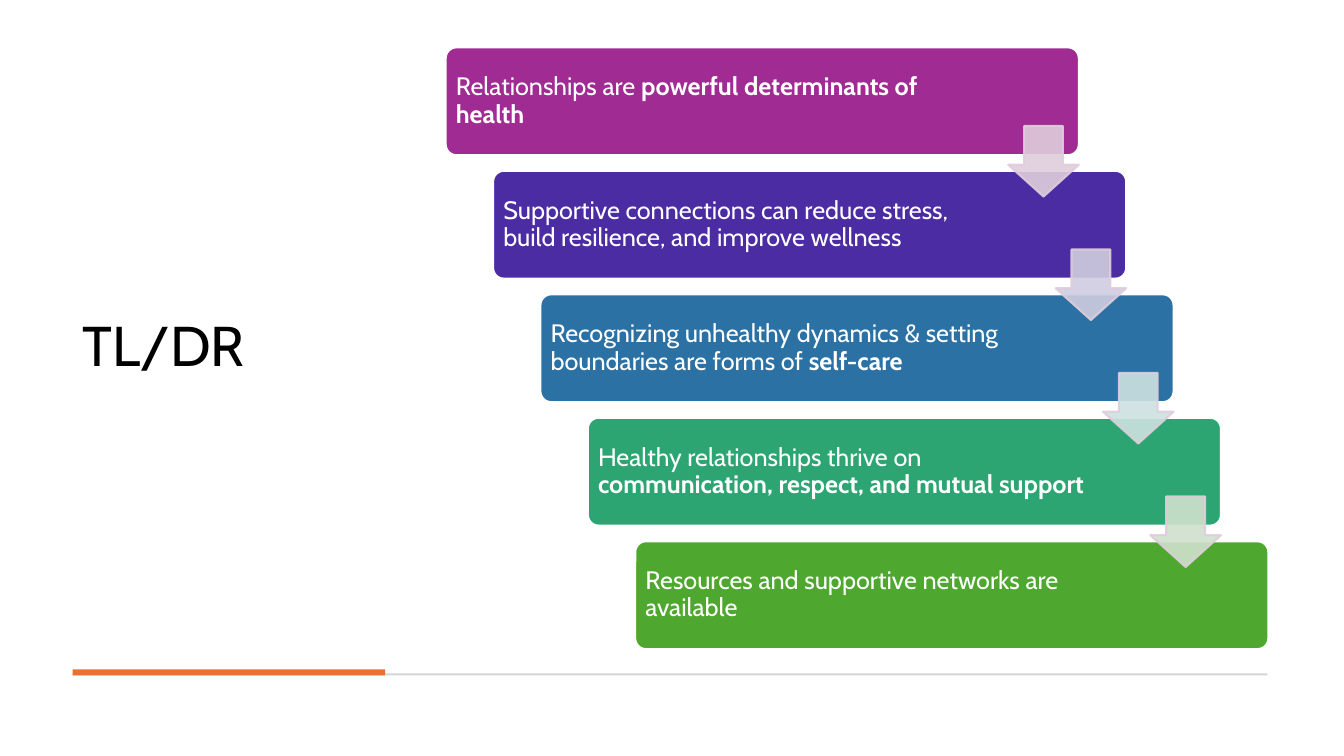
import pptx
import pptx.util
import pptx.dml.color
import pptx.enum.shapes
import pptx.enum.text
import pptx.oxml
import pptx.oxml.ns
from dataclasses import dataclass

Inches = pptx.util.Inches
Pt = pptx.util.Pt
SHAPES = pptx.enum.shapes.MSO_SHAPE
MIDDLE = pptx.enum.text.MSO_ANCHOR.MIDDLE
LEFT = pptx.enum.text.PP_ALIGN.LEFT


@dataclass
class Theme:
    font: str = "Cabin"
    title_size: int = 40
    body_size: int = 18
    outline: float = 1.5
    black: str = "000000"
    white: str = "FFFFFF"
    rule: str = "D5D5D5"
    accent: str = "E97132"
    arrow_line: str = "DFCDDC"
    arrow_opacity: int = 90


theme = Theme()

# Card fill, fill of the arrow leaving the card, and (text, bold) runs
takeaways = [
    ("A02B93", "DFCDDC", [("Relationships are ", False),
                          ("powerful determinants of health", True)]),
    ("4B2CA2", "CFCDE0", [("Supportive connections can reduce stress, "
                           "build resilience, and improve wellness", False)]),
    ("2C71A4", "CDE1E0", [("Recognizing unhealthy dynamics & setting "
                           "boundaries are forms of ", False),
                          ("self-care", True)]),
    ("2DA573", "D0E1CD", [("Healthy relationships thrive on ", False),
                          ("communication, respect, and mutual support", True)]),
    ("4EA72E", None, [("Resources and supportive networks are available", False)]),
]

deck = pptx.Presentation()
deck.slide_width = Inches(13.33)
deck.slide_height = Inches(7.5)
slide = deck.slides.add_slide(deck.slide_layouts[5])


def add_filled(kind, left, top, width, height, fill, line=None):
    """Add a shadowless shape; without a line colour it has no outline."""
    shape = slide.shapes.add_shape(
        kind, Inches(left), Inches(top), Inches(width), Inches(height))
    shape.shadow.inherit = False
    shape.fill.solid()
    shape.fill.fore_color.rgb = pptx.dml.color.RGBColor.from_string(fill)
    if line:
        shape.line.color.rgb = pptx.dml.color.RGBColor.from_string(line)
        shape.line.width = Pt(theme.outline)
    else:
        shape.line.fill.background()
    return shape


def add_span(para, text, size, color, bold=False):
    span = para.add_run()
    span.text = text
    span.font.name = theme.font
    span.font.size = Pt(size)
    span.font.bold = bold
    span.font.color.rgb = pptx.dml.color.RGBColor.from_string(color)


# Title
title = slide.shapes.title
title.left, title.top = Inches(0.72), Inches(0.47)
title.width, title.height = Inches(3.1), Inches(5.97)
title.text_frame.vertical_anchor = MIDDLE
title.text_frame.word_wrap = True
para = title.text_frame.paragraphs[0]
para.alignment = LEFT
para.line_spacing = 0.9
add_span(para, "TL/DR", theme.title_size, theme.black)

# Footer rule with its accent
add_filled(SHAPES.RECTANGLE, 0.72, 6.68, 11.85, 0.02, theme.rule)
add_filled(SHAPES.RECTANGLE, 0.72, 6.64, 3.1, 0.06, theme.accent)

# Staircase of cards
step_x, step_y = 0.47, 1.225
for index, (card_fill, arrow_fill, spans) in enumerate(takeaways):
    card = add_filled(SHAPES.ROUNDED_RECTANGLE, 4.42 + index * step_x,
                      0.47 + index * step_y, 6.28, 1.07, card_fill, theme.white)
    card.adjustments[0] = 0.1
    frame = card.text_frame
    frame.word_wrap = True
    frame.vertical_anchor = MIDDLE
    frame.margin_left = frame.margin_top = frame.margin_bottom = Inches(0.07)
    frame.margin_right = Inches(1.24)
    para = frame.paragraphs[0]
    para.alignment = LEFT
    para.line_spacing = 0.9
    for text, bold in spans:
        add_span(para, text, theme.body_size, theme.white, bold)

# Arrows from each card to the next, above all cards
for index, (card_fill, arrow_fill, spans) in enumerate(takeaways[:-1]):
    arrow = add_filled(SHAPES.DOWN_ARROW, 10 + index * step_x,
                       1.25 + index * step_y, 0.7, 0.7,
                       arrow_fill, theme.arrow_line)
    arrow.adjustments[0] = 0.55
    arrow.adjustments[1] = 0.45
    for color in arrow.element.spPr.iter(pptx.oxml.ns.qn("a:srgbClr")):
        alpha = pptx.oxml.parse_xml(
            f'<a:alpha {pptx.oxml.ns.nsdecls("a")} val="{theme.arrow_opacity * 1000}"/>')
        color.append(alpha)

deck.save("out.pptx")
